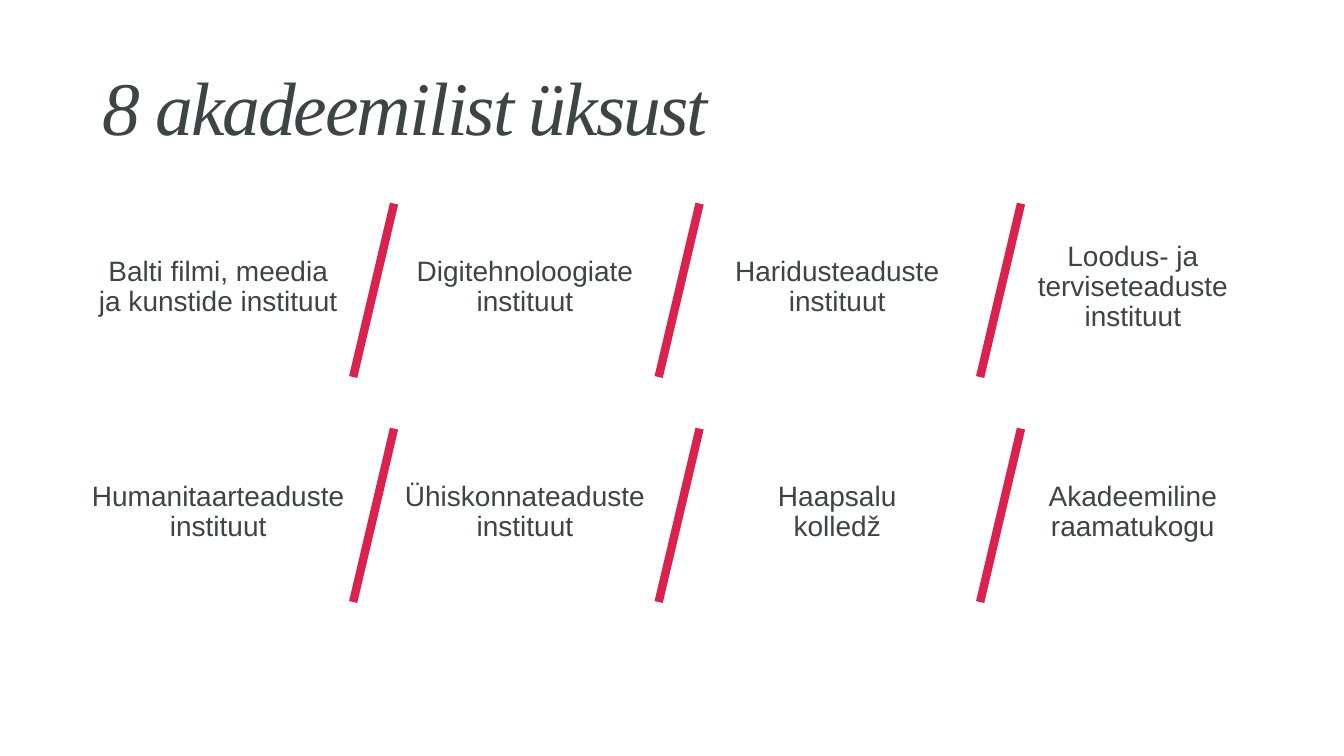
from dataclasses import dataclass

from lxml.etree import SubElement
from pptx import Presentation
from pptx.dml.color import RGBColor
from pptx.enum.shapes import MSO_CONNECTOR as Connector
from pptx.enum.text import MSO_ANCHOR as Anchor, MSO_AUTO_SIZE as AutoSize, PP_ALIGN as Align
from pptx.oxml.ns import qn
from pptx.util import Cm, Pt


@dataclass(frozen=True)
class Theme:
    ink: RGBColor = RGBColor(0x3C, 0x44, 0x45)
    accent: RGBColor = RGBColor(0xDB, 0x22, 0x4C)
    title_font: str = "Times New Roman"
    body_font: str = "Arial"
    title_size: Pt = Pt(54)
    body_size: Pt = Pt(20)
    slash_width: Pt = Pt(6)


theme = Theme()


def place(box, left, top, width, height):
    box.left, box.top, box.width, box.height = Cm(left), Cm(top), Cm(width), Cm(height)


def write(box, text, align, spacing, font, size):
    frame = box.text_frame
    frame.word_wrap = True
    frame.auto_size = AutoSize.NONE
    frame.vertical_anchor = Anchor.MIDDLE
    para = frame.paragraphs[0]
    para.alignment = align
    para.line_spacing = spacing
    para.space_before = Pt(0)
    for number, line in enumerate(text.split("\n")):
        if number:
            para.add_line_break()
        span = para.add_run()
        span.text = line
        span.font.name = font
        span.font.size = size
        span.font.color.rgb = theme.ink
    return para


deck = Presentation()
deck.slide_width, deck.slide_height = Cm(33.87), Cm(19.05)
page = deck.slides.add_slide(deck.slide_layouts[1])
title, body = page.placeholders

# Title
place(title, 2.34, 1.02, 29.21, 3.68)
para = write(title, "8 akadeemilist üksust", Align.LEFT, 0.8, theme.title_font, theme.title_size)
span = para.runs[0]
span.font.italic = True
span.font.bold = False
span.font._element.set("spc", "-150")

# Grid of academic units
units = [
    ["Balti filmi, meedia ja kunstide instituut", "Digitehnoloogiate instituut",
     "Haridusteaduste instituut", "Loodus- ja terviseteaduste instituut"],
    ["Humanitaarteaduste instituut", "Ühiskonnateaduste instituut",
     "Haapsalu\nkolledž", "Akadeemiline raamatukogu"],
]
centres = [5.5, 13.23, 21.1, 28.55]
slash_tops = [9.93, 17.63, 25.73]
row_pitch = 5.67
unit_top, unit_width, wide_width, unit_height = 5.44, 6.7, 7.0, 3.6
slash_top, slash_height, slash_lean = 5.13, 4.37, 1.03

for row, names in enumerate(units):
    shift = row * row_pitch

    # Unit names, the last of the first row in the body placeholder
    for centre, name in zip(centres, names):
        in_body = name.startswith("Loodus")
        width = wide_width if name.startswith("Humanitaar") else unit_width
        box = body if in_body else page.shapes.add_textbox(0, 0, 0, 0)
        place(box, centre - width / 2, unit_top + shift, width, unit_height)
        if in_body:
            properties = box.text_frame.paragraphs[0]._p.get_or_add_pPr()
            properties.set("marL", "0")
            properties.set("indent", "0")
            SubElement(properties, qn("a:buNone"))
        write(box, name, Align.CENTER, 0.9, theme.body_font, theme.body_size)

    # Slashes between the columns
    for x in slash_tops:
        slash = page.shapes.add_connector(
            Connector.STRAIGHT, Cm(x), Cm(slash_top + shift),
            Cm(x - slash_lean), Cm(slash_top + slash_height + shift))
        slash.line.color.rgb = theme.accent
        slash.line.width = theme.slash_width
        SubElement(slash._element.spPr, qn("a:effectLst"))

deck.save("out.pptx")
